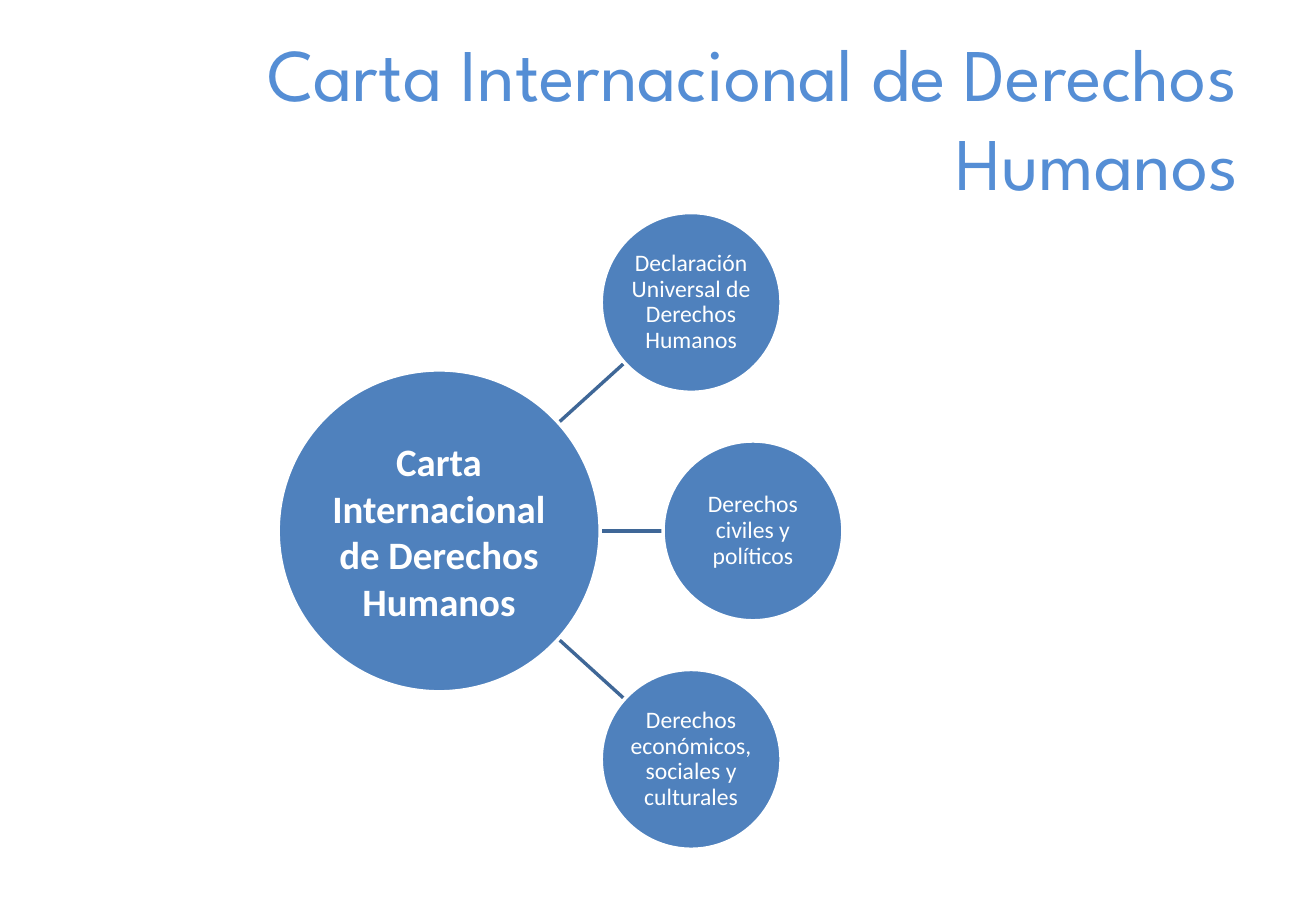
from math import cos, radians, sin

from lxml import etree
from pptx import Presentation
from pptx.dml.color import RGBColor
from pptx.enum.shapes import MSO_CONNECTOR, MSO_SHAPE
from pptx.enum.text import MSO_ANCHOR, PP_ALIGN
from pptx.oxml.ns import qn
from pptx.util import Pt

ELLIPSE = MSO_SHAPE.OVAL
STRAIGHT = MSO_CONNECTOR.STRAIGHT
MIDDLE = MSO_ANCHOR.MIDDLE
CENTER, RIGHT = PP_ALIGN.CENTER, PP_ALIGN.RIGHT

COLORS = {"title": "558ED5", "circle": "4F81BD", "spoke": "3F6797", "white": "FFFFFF"}
TITLE = "Carta Internacional de Derechos Humanos"
RIGHTS = [
    ("Declaración Universal de Derechos Humanos", -42.2, 201.6),
    ("Derechos civiles y políticos", 0, 186),
    ("Derechos económicos, sociales y culturales", 42.2, 201.6),
]
HUB_RADIUS = 95.4
RIGHT_RADIUS = 53.28


def color(name):
    return RGBColor.from_string(COLORS[name])


def write_text(shape, text, font="Calibri", size=14, fill="white", bold=False,
               align=CENTER, spacing=1.0, inset=0.7):
    frame = shape.text_frame
    frame.word_wrap = True
    frame.vertical_anchor = MIDDLE
    frame.margin_left = frame.margin_right = Pt(inset)
    frame.margin_top = frame.margin_bottom = Pt(inset)
    paragraph = frame.paragraphs[0]
    paragraph.alignment = align
    paragraph.line_spacing = spacing
    run = paragraph.add_run()
    run.text = text
    run.font.name = font
    run.font.size = Pt(size)
    run.font.bold = bold
    run.font.color.rgb = color(fill)


def add_circle(slide, x, y, radius, text, **text_format):
    circle = slide.shapes.add_shape(
        ELLIPSE, Pt(x - radius), Pt(y - radius), Pt(2 * radius), Pt(2 * radius))
    circle.shadow.inherit = False
    circle.fill.solid()
    circle.fill.fore_color.rgb = color("circle")
    circle.line.color.rgb = color("white")
    circle.line.width = Pt(2)
    write_text(circle, text, **text_format)


def add_spoke(slide, x, y, angle, start, end):
    across, down = cos(radians(angle)), sin(radians(angle))
    spoke = slide.shapes.add_connector(
        STRAIGHT, Pt(x + start * across), Pt(y + start * down),
        Pt(x + end * across), Pt(y + end * down))
    spoke.line.color.rgb = color("spoke")
    spoke.line.width = Pt(2)
    etree.SubElement(spoke._element.spPr, qn("a:effectLst"))


def add_title(slide, left, top, width, height):
    title = slide.shapes.add_textbox(Pt(left), Pt(top), Pt(width), Pt(height))
    write_text(title, TITLE, font="League Spartan", size=44, fill="title",
               align=RIGHT, inset=7.2)


def add_radial_diagram(slide, left, top, height):
    x, y = left + HUB_RADIUS, top + height / 2
    for text, angle, distance in RIGHTS:
        add_spoke(slide, x, y, angle, HUB_RADIUS, distance - RIGHT_RADIUS)
    add_circle(slide, x, y, HUB_RADIUS, TITLE, size=23, bold=True, inset=2.6)
    for text, angle, distance in RIGHTS:
        add_circle(slide, x + distance * cos(radians(angle)),
                   y + distance * sin(radians(angle)), RIGHT_RADIUS, text, spacing=0.9)


def main():
    presentation = Presentation()
    presentation.slide_width = Pt(780)
    presentation.slide_height = Pt(540)
    slide = presentation.slides.add_slide(presentation.slide_layouts[6])
    add_title(slide, left=39, top=24, width=702, height=90)
    add_radial_diagram(slide, left=164.9, top=126, height=377.4)
    presentation.save("out.pptx")


if __name__ == "__main__":
    main()
